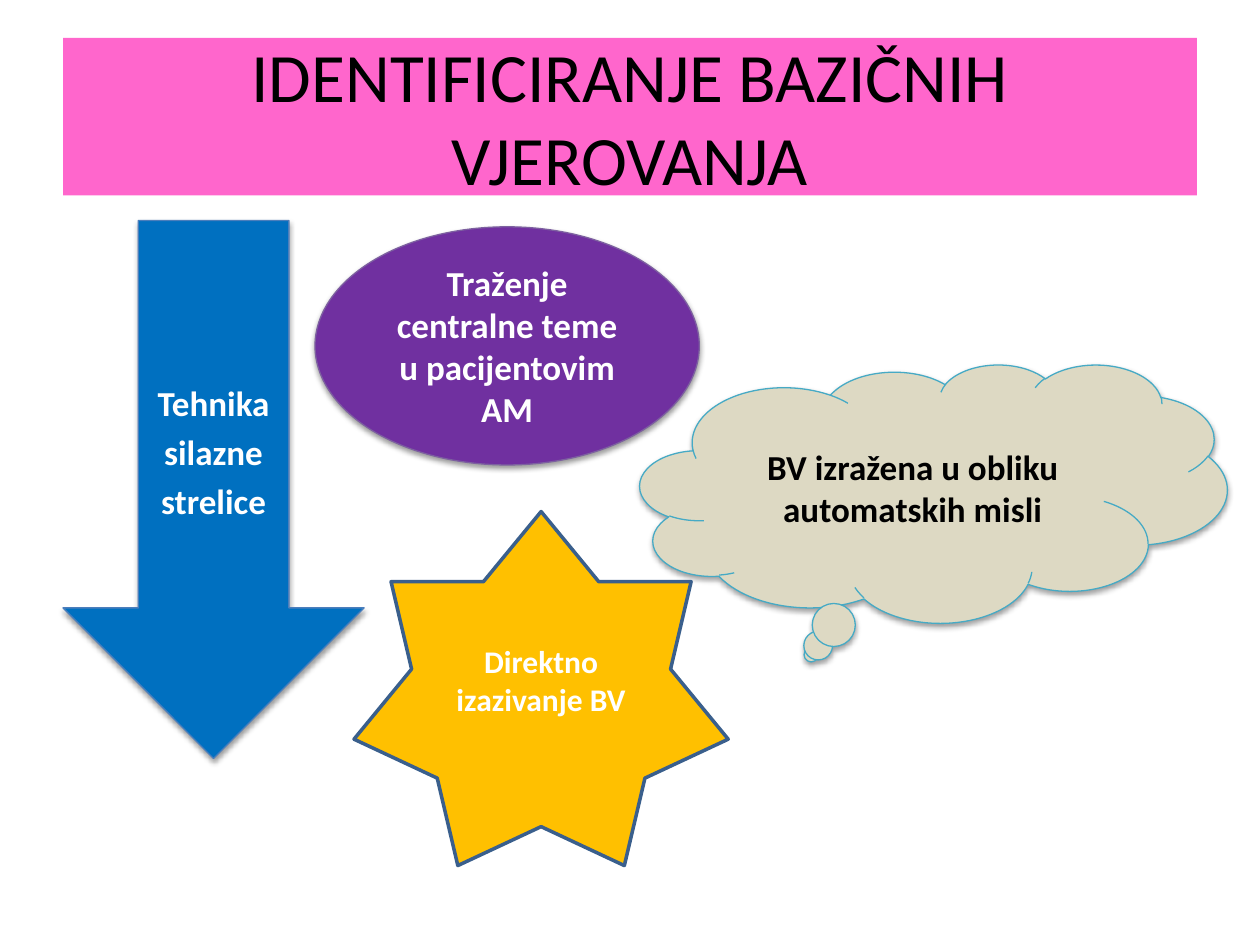
from lxml import etree
from pptx import Presentation
from pptx import util as u
from pptx.dml.color import RGBColor
from pptx.enum import shapes, text
from pptx.oxml import parse_xml
from pptx.oxml.ns import nsdecls, qn

PX = 9144  # EMU per px, 100 px to the inch
FONT = "Calibri"
COLORS = {
    "pink": "FF66CC", "blue": "0070C0", "blue_edge": "4B7EBC",
    "purple": "7030A0", "purple_edge": "7D60A0",
    "sand": "DDD9C3", "teal_edge": "46AAC5",
    "gold": "FFC000", "navy_edge": "3A5F8C",
    "black": "000000", "white": "FFFFFF",
}


def rgb(name):
    return RGBColor.from_string(COLORS[name])


class SlideBuilder:
    def __init__(self, slide):
        self.slide = slide

    def place(self, shape, box):
        shape.left, shape.top, shape.width, shape.height = (n * PX for n in box)

    def paint(self, shape, fill, edge=None, weight=0.75):
        shape.fill.solid()
        shape.fill.fore_color.rgb = rgb(fill)
        if edge:
            shape.line.color.rgb = rgb(edge)
            shape.line.width = u.Pt(weight)

    def shadow(self, shape):
        shape._element.spPr.append(parse_xml(
            f'<a:effectLst {nsdecls("a")}><a:outerShdw blurRad="40000" dist="20000" '
            'dir="5400000" rotWithShape="0"><a:srgbClr val="000000">'
            '<a:alpha val="38000"/></a:srgbClr></a:outerShdw></a:effectLst>'))

    def label(self, shape, words, size, color, bold=True):
        frame = shape.text_frame
        frame.text = words
        frame.word_wrap = True
        frame.auto_size = text.MSO_AUTO_SIZE.NONE
        frame.vertical_anchor = text.MSO_ANCHOR.MIDDLE
        for paragraph in frame.paragraphs:
            paragraph.alignment = text.PP_ALIGN.CENTER
            for run in paragraph.runs:
                font = run.font
                font.name, font.size, font.bold = FONT, u.Pt(size), bold
                font.color.rgb = rgb(color)

    def title(self, words, box, fill):
        heading = self.slide.shapes.title
        self.place(heading, box)
        self.paint(heading, fill)
        self.label(heading, words, 39.6, "black", bold=False)

    def body_arrow(self, lines, box, fill, edge):
        arrow = self.slide.placeholders[1]
        self.place(arrow, box)
        geometry = etree.SubElement(arrow._element.spPr, qn("a:prstGeom"), prst="downArrow")
        etree.SubElement(geometry, qn("a:avLst"))
        self.paint(arrow, fill, edge)
        self.shadow(arrow)
        self.label(arrow, "\n".join(lines), 20, "white")
        for paragraph in arrow.text_frame.paragraphs:
            etree.SubElement(paragraph._p.get_or_add_pPr(), qn("a:buNone"))

    def callout(self, kind, words, box, fill, edge, color="white", size=20,
                weight=0.75, shadow=True):
        callout = self.slide.shapes.add_shape(kind, *(n * PX for n in box))
        self.paint(callout, fill, edge, weight)
        if shadow:
            self.shadow(callout)
        else:
            callout.shadow.inherit = False
        self.label(callout, words, size, color)


def main():
    deck = Presentation()
    deck.slide_width, deck.slide_height = 1000 * PX, 750 * PX
    page = SlideBuilder(deck.slides.add_slide(deck.slide_layouts[1]))
    kinds = shapes.MSO_SHAPE

    # Heading and downward-arrow technique
    page.title("IDENTIFICIRANJE BAZIČNIH VJEROVANJA", (50, 30, 900, 125), "pink")
    page.body_arrow(["Tehnika", "silazne", "strelice"], (50, 175, 239, 427),
                    "blue", "blue_edge")

    # Other ways to find core beliefs
    page.callout(kinds.OVAL, "Traženje centralne teme u pacijentovim AM",
                 (250, 180, 305, 189), "purple", "purple_edge")
    page.callout(kinds.CLOUD_CALLOUT, "BV izražena u obliku automatskih misli",
                 (508, 289, 466, 205), "sand", "teal_edge", color="black")
    page.callout(kinds.STAR_7_POINT, "Direktno izazivanje BV",
                 (281, 406, 297, 281), "gold", "navy_edge", size=18,
                 weight=2, shadow=False)

    deck.save("out.pptx")


if __name__ == "__main__":
    main()
